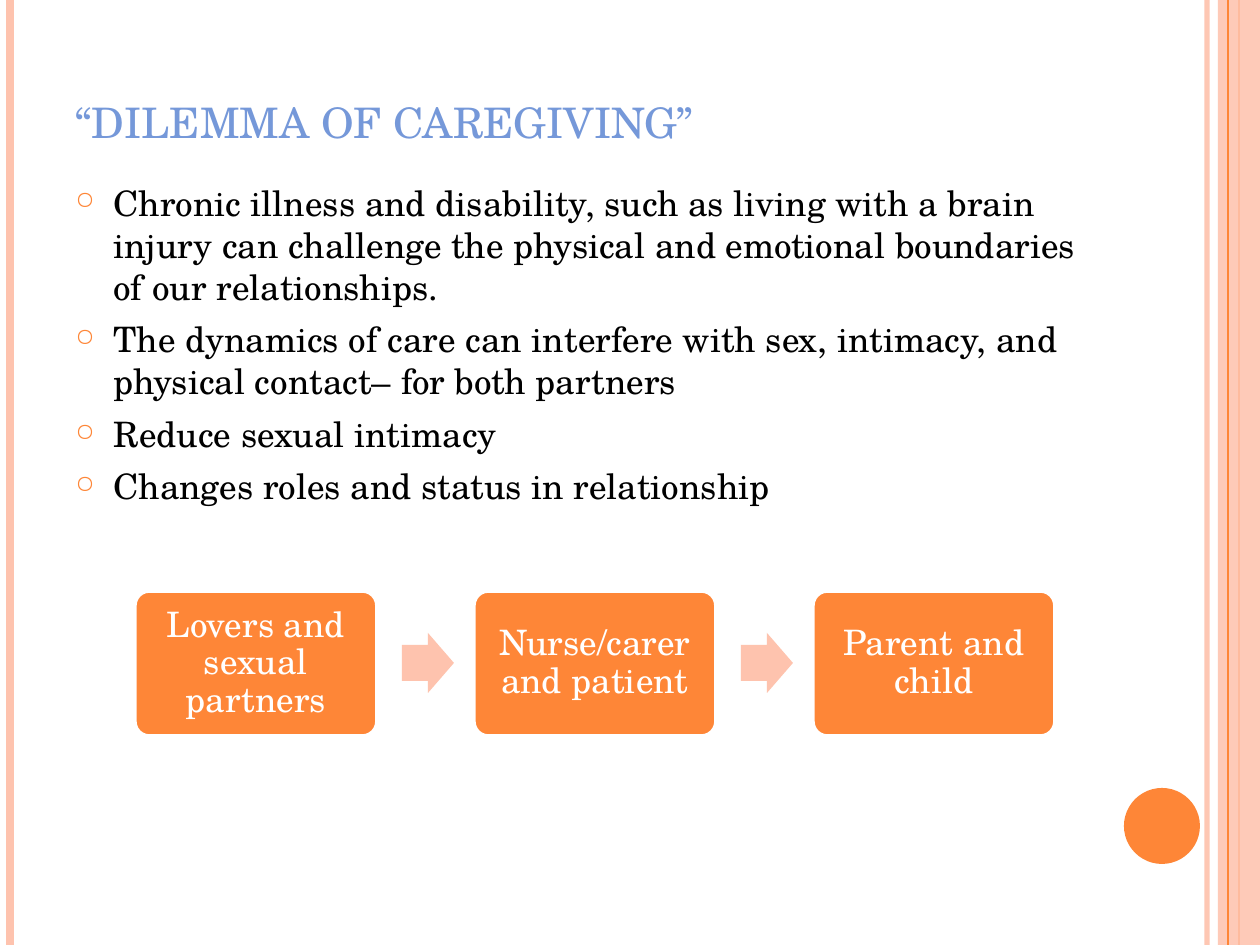
from lxml import etree
from pptx import Presentation
from pptx import util as u
from pptx.dml.color import RGBColor
from pptx.enum import shapes, text
from pptx.oxml.ns import qn

ORANGE = RGBColor(0xFE, 0x86, 0x37)
PEACH = RGBColor(0xFE, 0xC3, 0xAE)
BLUE = RGBColor(0x75, 0x98, 0xD9)
BLACK = RGBColor(0, 0, 0)
WHITE = RGBColor(255, 255, 255)

EMU_PER_PX = 914400 / 126
SLIDE_W, SLIDE_H = 1260, 945


def px(length):
    return u.Emu(round(length * EMU_PER_PX))


def set_opacity(properties, percent):
    """Make every colour within the given properties partly transparent."""
    for color in properties.iter(qn("a:srgbClr")):
        etree.SubElement(color, qn("a:alpha"), val=str(percent * 1000))


class SlideBuilder:
    font_name = "TeX Gyre Schola"
    body_size = 20
    title_size = 30

    def __init__(self, slide):
        self.slide = slide

    def style(self, paragraph, size, color):
        paragraph.font.name = self.font_name
        paragraph.font.size = u.Pt(size)
        paragraph.font.color.rgb = color

    def title(self, words, left, top, width, height):
        heading = self.slide.shapes.title
        heading.left, heading.top = px(left), px(top)
        heading.width, heading.height = px(width), px(height)
        frame = heading.text_frame
        frame.text = words
        frame.auto_size = text.MSO_AUTO_SIZE.NONE
        frame.vertical_anchor = text.MSO_ANCHOR.BOTTOM
        paragraph = frame.paragraphs[0]
        paragraph.alignment = text.PP_ALIGN.LEFT
        self.style(paragraph, self.title_size, BLUE)
        paragraph.runs[0]._r.get_or_add_rPr().set("cap", "small")

    def bullets(self, points, left, top, width, height, indent=38):
        frame = self.slide.shapes.add_textbox(
            px(left), px(top), px(width), px(height)).text_frame
        frame.word_wrap = True
        frame.text = "\n".join(points)
        for paragraph in frame.paragraphs:
            props = paragraph._p.get_or_add_pPr()
            props.set("marL", str(px(indent)))
            props.set("indent", str(-px(indent)))
            bullet_color = etree.SubElement(props, qn("a:buClr"))
            etree.SubElement(bullet_color, qn("a:srgbClr"), val=str(ORANGE))
            etree.SubElement(props, qn("a:buSzPct"), val="70000")
            etree.SubElement(props, qn("a:buChar"), char="○")
            paragraph.space_before = u.Pt(6)
            self.style(paragraph, self.body_size, BLACK)

    def shape(self, kind, left, top, width, height, fill, adjustments=(), opacity=100):
        item = self.slide.shapes.add_shape(
            kind, px(left), px(top), px(width), px(height))
        item.shadow.inherit = False
        item.fill.solid()
        item.fill.fore_color.rgb = fill
        item.line.fill.background()
        for index, value in enumerate(adjustments):
            item.adjustments[index] = value
        if opacity < 100:
            set_opacity(item._element.spPr, opacity)
        return item

    def stage(self, words, left, top, width, height):
        box = self.shape(shapes.MSO_SHAPE.ROUNDED_RECTANGLE,
                         left, top, width, height, ORANGE, [0.1])
        box.line.color.rgb = WHITE
        box.line.width = u.Pt(2)
        frame = box.text_frame
        frame.word_wrap = True
        frame.vertical_anchor = text.MSO_ANCHOR.MIDDLE
        frame.margin_left = frame.margin_right = px(10)
        frame.margin_top = frame.margin_bottom = px(10)
        frame.text = words
        paragraph = frame.paragraphs[0]
        paragraph.alignment = text.PP_ALIGN.CENTER
        paragraph.line_spacing = 0.9
        self.style(paragraph, self.body_size, WHITE)

    def stripe(self, x, color, weight, opacity=100):
        line = self.slide.shapes.add_connector(
            shapes.MSO_CONNECTOR.STRAIGHT, px(x), 0, px(x), px(SLIDE_H))
        line.line.color.rgb = color
        line.line.width = u.Pt(weight)
        props = line._element.spPr
        if opacity < 100:
            set_opacity(props, opacity)
        etree.SubElement(props, qn("a:effectLst"))


def main():
    deck = Presentation()
    deck.slide_width, deck.slide_height = px(SLIDE_W), px(SLIDE_H)
    builder = SlideBuilder(deck.slides.add_slide(deck.slide_layouts[5]))

    # Border stripes and corner disc
    builder.stripe(1207, PEACH, 3, opacity=93)
    builder.stripe(10, PEACH, 4.5)
    builder.stripe(1239, ORANGE, 1.5)
    builder.shape(shapes.MSO_SHAPE.RECTANGLE, 1218, 0, 42, SLIDE_H, PEACH, opacity=87)
    builder.stripe(1228, ORANGE, 0.75)
    builder.shape(shapes.MSO_SHAPE.OVAL, 1124, 788, 76, 76, ORANGE)

    # Title and points
    builder.title("“dilemma of caregiving”", 63, 38, 1029, 117)
    builder.bullets([
        "Chronic illness and disability, such as living with a brain injury can "
        "challenge the physical and emotional boundaries of our relationships.",
        "The dynamics of care can interfere with sex, intimacy, and physical "
        "contact– for both partners",
        "Reduce sexual intimacy",
        "Changes roles and status in relationship",
    ], 63, 175, 1029, 717)

    # Changing roles, with an arrow between neighbours
    roles = ["Lovers and sexual partners", "Nurse/carer and patient", "Parent and child"]
    first_left, step = 135, 339
    for index, role in enumerate(roles):
        left = first_left + index * step
        builder.stage(role, left, 591, 242, 145)
        if index < len(roles) - 1:
            builder.shape(shapes.MSO_SHAPE.RIGHT_ARROW,
                          left + 267, 633, 52, 60, PEACH, [0.6, 0.5])

    deck.save("out.pptx")


if __name__ == "__main__":
    main()
